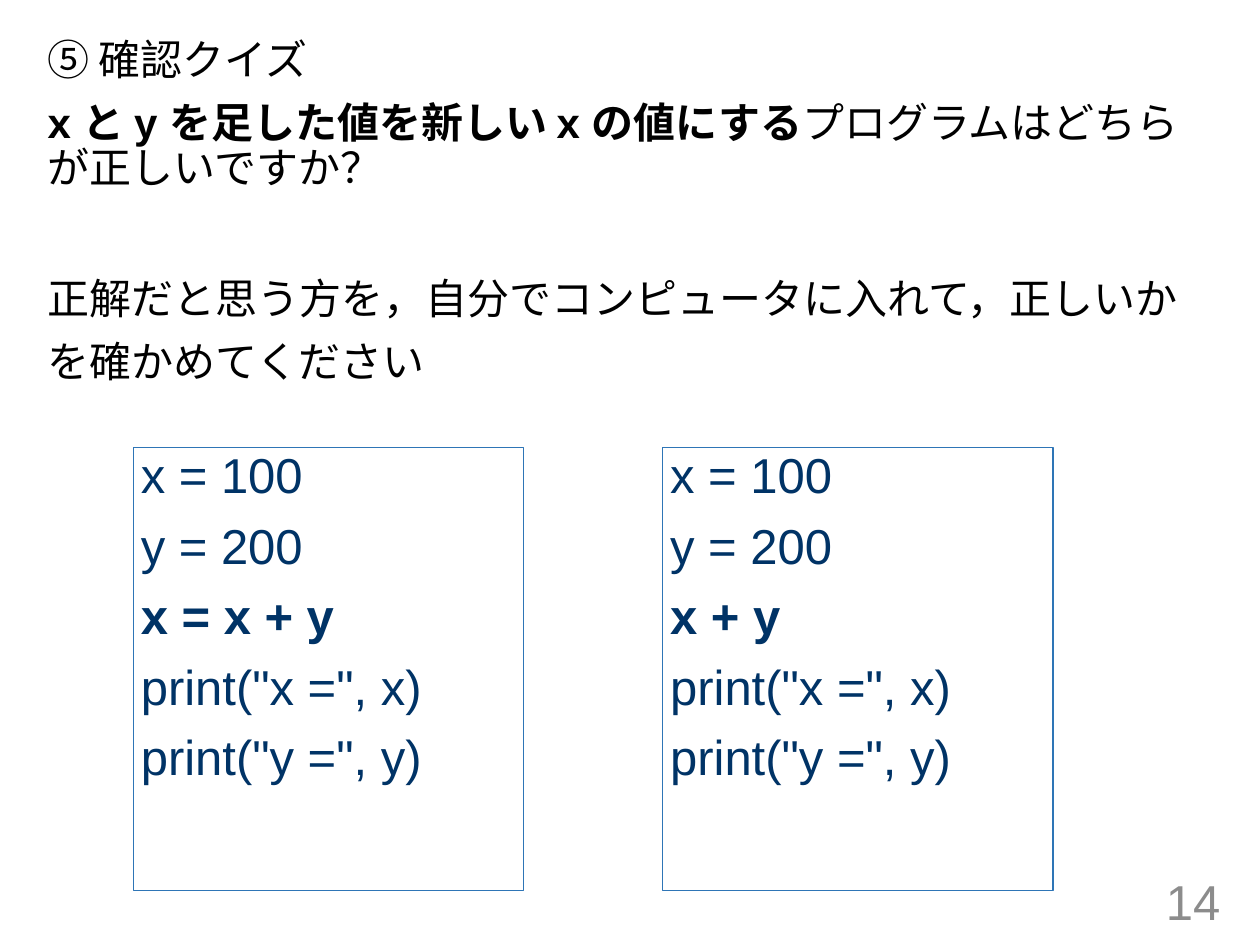
from dataclasses import dataclass
from pptx import Presentation
from pptx.dml.color import RGBColor as Rgb
from pptx.enum.shapes import MSO_SHAPE as Shape
from pptx.enum.text import MSO_ANCHOR as Anchor, PP_ALIGN as Align
from pptx.util import Cm, Pt


@dataclass(frozen=True)
class Theme:
    face: str = "Arial"
    ink: Rgb = Rgb(0x00, 0x00, 0x00)
    code: Rgb = Rgb(0x00, 0x33, 0x66)
    edge: Rgb = Rgb(0x2E, 0x75, 0xB6)
    gray: Rgb = Rgb(0x8C, 0x8C, 0x8C)
    body: int = 24
    large: int = 28


LOOK = Theme()


def style(para, size, color, bold=False):
    font = para.font
    font.name, font.size, font.bold = LOOK.face, Pt(size), bold
    font.color.rgb = color


def fill(frame, lines, size, color, gaps):
    """Write one paragraph per line; a line is a list of (text, bold) runs."""
    for i, (line, gap) in enumerate(zip(lines, gaps)):
        para = frame.paragraphs[0] if i == 0 else frame.add_paragraph()
        para.alignment = Align.LEFT
        para.line_spacing = 0.9
        para.space_before = Pt(gap)
        style(para, size, color, all(bold for _, bold in line))
        for text, bold in line:
            run = para.add_run()
            run.text = text
            if len(line) > 1:
                run.font.bold = bold


def add_text(slide, left, top, width, height):
    box = slide.shapes.add_textbox(Cm(left), Cm(top), Cm(width), Cm(height))
    box.text_frame.word_wrap = True
    return box.text_frame


def add_code(slide, left, step):
    box = slide.shapes.add_shape(Shape.RECTANGLE, Cm(left), Cm(9.02), Cm(7.87), Cm(8.94))
    box.shadow.inherit = False
    box.fill.background()
    box.line.color.rgb = LOOK.edge
    box.line.width = Pt(0.75)
    frame = box.text_frame
    frame.word_wrap = True
    frame.vertical_anchor = Anchor.TOP
    frame.margin_left = frame.margin_right = Cm(0.15)
    frame.margin_top = frame.margin_bottom = Cm(0.08)
    code = ["x = 100", "y = 200", step, 'print("x =", x)', 'print("y =", y)']
    lines = [[(text, text == step)] for text in code]
    fill(frame, lines, LOOK.large, LOOK.code, [0, 10, 10, 10, 10])


def main():
    deck = Presentation()
    deck.slide_width, deck.slide_height = Cm(25.4), Cm(19.05)
    slide = deck.slides.add_slide(deck.slide_layouts[6])

    # Question
    quiz = [
        [("⑤ 確認クイズ", False)],
        [("x と y を足した値を新しい x の値にする", True),
         ("プログラムはどちらが正しいですか？", False)],
        [("正解だと思う方を，自分でコンピュータに入れて，正しいか", False)],
        [("を確かめてください", False)],
    ]
    frame = add_text(slide, 0.71, 0.66, 23.5, 14.81)
    fill(frame, quiz, LOOK.body, LOOK.ink, [0, 10, 49, 10])

    # Two candidate programs
    for left, step in ((2.69, "x = x + y"), (13.36, "x + y")):
        add_code(slide, left, step)

    # Page number
    frame = add_text(slide, 19.13, 17.65, 5.72, 1.02)
    frame.vertical_anchor = Anchor.MIDDLE
    para = frame.paragraphs[0]
    para.text = "14"
    para.alignment = Align.RIGHT
    style(para, LOOK.large, LOOK.gray)

    deck.save("out.pptx")


if __name__ == "__main__":
    main()
